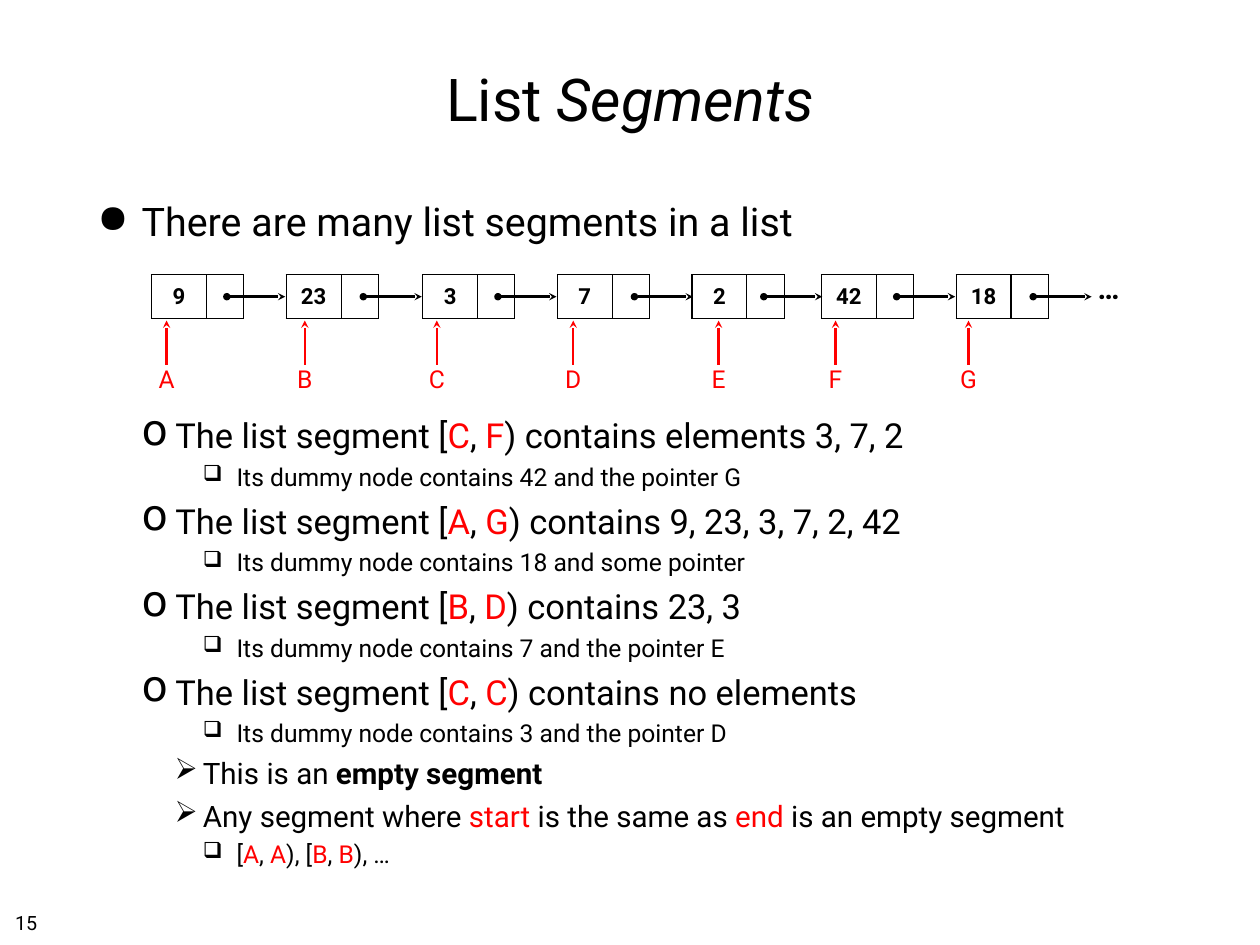
from dataclasses import dataclass

from lxml.etree import SubElement
from pptx import Presentation
from pptx.dml.color import RGBColor
from pptx.enum.shapes import MSO_CONNECTOR as Connector
from pptx.enum.text import MSO_ANCHOR as Anchor, MSO_AUTO_SIZE as AutoSize, PP_ALIGN as Align
from pptx.oxml.ns import qn
from pptx.util import Inches, Pt


@dataclass(frozen=True)
class Theme:
    font: str = "Roboto"
    ink: str = "000000"
    accent: str = "FF0000"
    title: int = 48
    ellipsis: int = 24
    label: int = 20
    value: int = 18
    page_number: int = 16
    border: int = 1
    arrow: int = 2


@dataclass(frozen=True)
class Level:
    depth: int
    size: int
    left: float
    hanging: float
    before: float
    bullet: str
    bullet_percent: int = 100


TOPIC = Level(0, 32, 0.5, 0.5, 8, "●")
SEGMENT = Level(1, 28, 0.88, 0.38, 7, "o", 125)
REMARK = Level(2, 24, 1.19, 0.32, 6, "➢")
DETAIL = Level(3, 20, 1.57, 0.38, 4.8, "❑", 90)
DIAGRAM_GAP = 138

OUTLINE = [
    (TOPIC, "There are many list segments in a list", "accent"),
    (SEGMENT, "The list segment [*C*, *F*) contains elements 3, 7, 2", "accent"),
    (DETAIL, "Its dummy node contains 42 and the pointer G", "accent"),
    (SEGMENT, "The list segment [*A*, *G*) contains 9, 23, 3, 7, 2, 42", "accent"),
    (DETAIL, "Its dummy node contains 18 and some pointer", "accent"),
    (SEGMENT, "The list segment [*B*, *D*) contains 23, 3", "accent"),
    (DETAIL, "Its dummy node contains 7 and the pointer E", "accent"),
    (SEGMENT, "The list segment [*C*, *C*) contains no elements", "accent"),
    (DETAIL, "Its dummy node contains 3 and the pointer D", "accent"),
    (REMARK, "This is an *empty segment*", "bold"),
    (REMARK, "Any segment where *start* is the same as *end *is an empty segment", "accent"),
    (DETAIL, "[*A*, *A*), [*B*, *B*), …", "accent"),
]

NODES = [
    ("A", "9", 1.71, 1.88, 2.56),
    ("B", "23", 3.23, 3.44, 4.1),
    ("C", "3", 4.77, 4.93, 5.62),
    ("D", "7", 6.29, 6.47, 7.16),
    ("E", "2", 7.81, 8.11, 8.62),
    ("F", "42", 9.27, 9.43, 10.12),
    ("G", "18", 10.79, 10.93, 11.66),
]
NODE_TOP, NODE_HEIGHT = 3.1, 0.5
NODE_COLUMNS = (0.62, 0.42)
LINK_Y, LINK_LENGTH = 3.35, 0.66
POINTER_BOTTOM, POINTER_TOP = 4.12, 3.62


class SlideBuilder:
    def __init__(self, slide, theme):
        self.slide = slide
        self.theme = theme

    def style(self, span, size, color=None, bold=None):
        span.font.name = self.theme.font
        span.font.size = Pt(size)
        span.font.bold = bold
        span.font.color.rgb = RGBColor.from_string(color or self.theme.ink)

    def rich_text(self, para, text, size, emphasis):
        for index, piece in enumerate(text.split("*")):
            if not piece:
                continue
            span = para.add_run()
            span.text = piece
            self.style(span, size)
            if index % 2 == 0:
                continue
            if emphasis == "accent":
                span.font.color.rgb = RGBColor.from_string(self.theme.accent)
            elif emphasis == "bold":
                span.font.bold = True
            else:
                span.font.italic = True

    def inset(self, frame, margin=0.06):
        frame.margin_left = frame.margin_right = Inches(margin)
        frame.margin_top = frame.margin_bottom = Inches(margin)

    def title(self, text, left, top, width, height):
        box = self.slide.shapes.title
        box.left, box.top = Inches(left), Inches(top)
        box.width, box.height = Inches(width), Inches(height)
        frame = box.text_frame
        frame.auto_size = AutoSize.NONE
        frame.vertical_anchor = Anchor.MIDDLE
        self.inset(frame)
        para = frame.paragraphs[0]
        para.alignment = Align.CENTER
        self.rich_text(para, text, self.theme.title, "italic")

    def outline(self, entries, left, top, width, height):
        box = self.slide.shapes.add_textbox(
            Inches(left), Inches(top), Inches(width), Inches(height))
        frame = box.text_frame
        frame.word_wrap = True
        self.inset(frame)
        for index, (level, text, emphasis) in enumerate(entries):
            para = frame.add_paragraph() if index else frame.paragraphs[0]
            para.level = level.depth
            para.space_before = Pt(DIAGRAM_GAP if index == 1 else level.before)
            self.bullet(para, level)
            self.rich_text(para, text, level.size, emphasis)

    def bullet(self, para, level):
        properties = para._p.get_or_add_pPr()
        properties.set("marL", str(Inches(level.left)))
        properties.set("indent", str(-Inches(level.hanging)))
        SubElement(properties, qn("a:buSzPct"), val=str(level.bullet_percent * 1000))
        SubElement(properties, qn("a:buChar"), char=level.bullet)

    def label(self, text, left, top, width, height, size, color=None, bold=None,
              align=Align.CENTER, margin=None):
        box = self.slide.shapes.add_textbox(
            Inches(left), Inches(top), Inches(width), Inches(height))
        frame = box.text_frame
        frame.text = text
        frame.word_wrap = False
        if margin is not None:
            self.inset(frame, margin)
        para = frame.paragraphs[0]
        para.alignment = align
        self.style(para.runs[0], size, color, bold)

    def arrow(self, start, end, color, head=None):
        line = self.slide.shapes.add_connector(
            Connector.STRAIGHT, *(Inches(value) for value in (*start, *end)))
        line.line.color.rgb = RGBColor.from_string(color)
        line.line.width = Pt(self.theme.arrow)
        properties = line.element.spPr
        stroke = properties.find(qn("a:ln"))
        if head:
            SubElement(stroke, qn("a:headEnd"), type=head)
        SubElement(stroke, qn("a:tailEnd"), type="stealth")
        SubElement(properties, qn("a:effectLst"))

    def node(self, value, left):
        frame = self.slide.shapes.add_table(
            1, 2, Inches(left), Inches(NODE_TOP),
            Inches(sum(NODE_COLUMNS)), Inches(NODE_HEIGHT))
        table = frame.table
        table.first_row = table.horz_banding = False
        for column, width in zip(table.columns, NODE_COLUMNS):
            column.width = Inches(width)
        for cell in table.iter_cells():
            self.border(cell)
            cell.fill.background()
            cell.vertical_anchor = Anchor.MIDDLE
        value_cell = table.cell(0, 0)
        value_cell.text = value
        para = value_cell.text_frame.paragraphs[0]
        para.alignment = Align.CENTER
        self.style(para.runs[0], self.theme.value, bold=True)

    def border(self, cell):
        properties = cell._tc.get_or_add_tcPr()
        for side in ("lnL", "lnR", "lnT", "lnB"):
            edge = SubElement(properties, qn(f"a:{side}"), w=str(Pt(self.theme.border)))
            fill = SubElement(edge, qn("a:solidFill"))
            SubElement(fill, qn("a:srgbClr"), val=self.theme.ink)


def main():
    deck = Presentation()
    deck.slide_width, deck.slide_height = Inches(14.22), Inches(10.67)
    theme = Theme()
    page = SlideBuilder(deck.slides.add_slide(deck.slide_layouts[5]), theme)
    page.title("List *Segments*", 1.04, 0.28, 12.14, 1.64)
    page.outline(OUTLINE, 1.04, 2.17, 12.14, 7.54)
    for name, value, left, pointer_x, link_x in NODES:
        page.node(value, left)
        page.arrow((link_x, LINK_Y), (link_x + LINK_LENGTH, LINK_Y), theme.ink, "oval")
        page.arrow((pointer_x, POINTER_BOTTOM), (pointer_x, POINTER_TOP), theme.accent)
        page.label(name, pointer_x - 0.2, 4.06, 0.4, 0.44, theme.label, theme.accent)
    page.label("…", 12.24, 3, 0.54, 0.5, theme.ellipsis, bold=True)
    page.label("15", 0.11, 10.23, 0.37, 0.35, theme.page_number, align=Align.LEFT, margin=0.06)
    deck.save("out.pptx")


if __name__ == "__main__":
    main()
